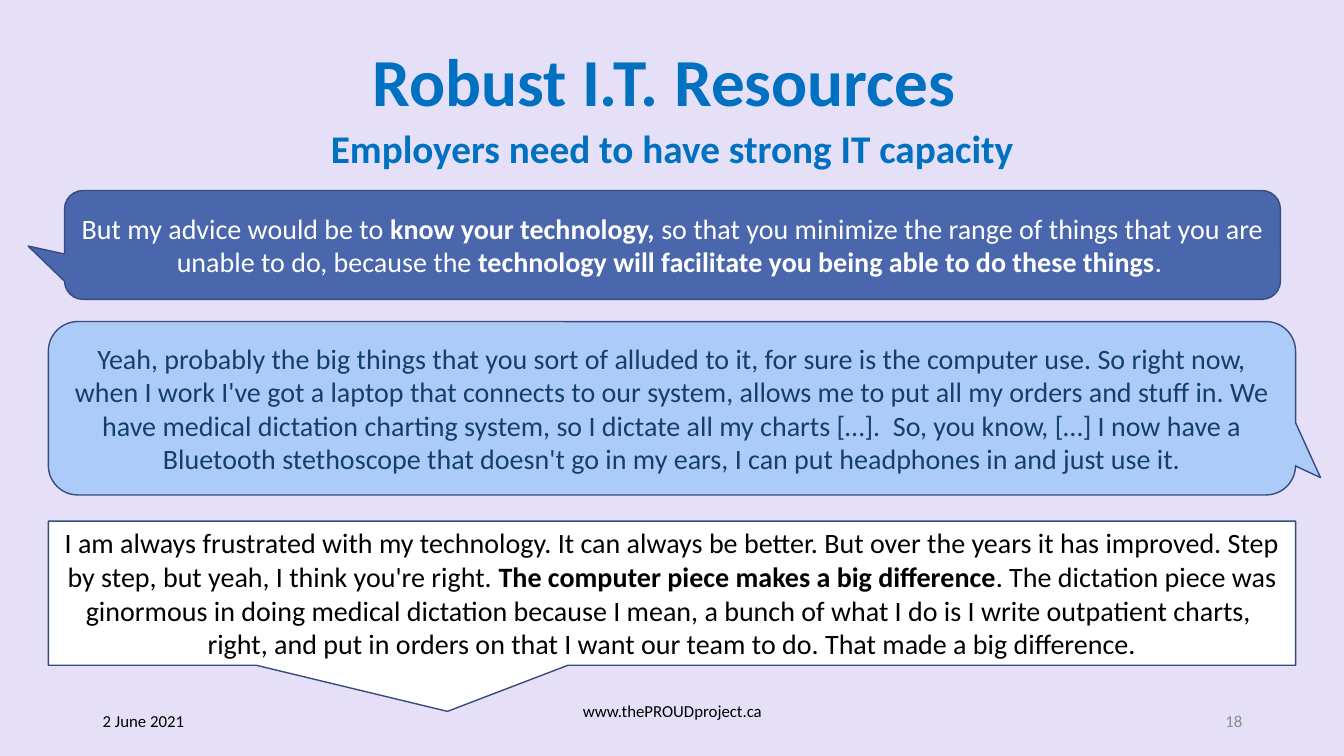
import pptx
import pptx.util
import pptx.dml.color
import pptx.enum.shapes
import pptx.enum.text

Inches = pptx.util.Inches
Shape = pptx.enum.shapes.MSO_SHAPE
Align = pptx.enum.text.PP_ALIGN
Anchor = pptx.enum.text.MSO_ANCHOR


def tint(code):
    return pptx.dml.color.RGBColor.from_string(code)


class Deck:
    """Holds the style and the current slide, and draws its elements."""

    font = "Calibri"
    edge = "374B7F"

    def __init__(self, back):
        self.prs = pptx.Presentation()
        self.prs.slide_width = Inches(13.33)
        self.prs.slide_height = Inches(7.5)
        self.slide = self.prs.slides.add_slide(self.prs.slide_layouts[6])
        fill = self.slide.background.fill
        fill.solid()
        fill.fore_color.rgb = tint(back)

    def letter(self, shape, paras, size, color, bold=False,
               align=Align.CENTER, space=None, **form):
        frame = shape.text_frame
        form = {"word_wrap": True, "vertical_anchor": Anchor.MIDDLE, **form}
        for key, value in form.items():
            setattr(frame, key, value)
        for num, text in enumerate(paras):
            para = frame.add_paragraph() if num else frame.paragraphs[0]
            para.alignment = align
            para.line_spacing = space
            for part, piece in enumerate(text.split("*")):
                run = para.add_run()
                run.text = piece
                style = {"name": self.font, "size": pptx.util.Pt(size),
                         "bold": bold or part % 2 == 1}
                for key, value in style.items():
                    setattr(run.font, key, value)
                run.font.color.rgb = tint(color)

    def label(self, spot, text, size, color, **form):
        box = self.slide.shapes.add_textbox(*map(Inches, spot))
        self.letter(box, [text], size, color, **form)

    def bubble(self, kind, spot, tail, fill, color, paras):
        shape = self.slide.shapes.add_shape(kind, *map(Inches, spot))
        for num, value in enumerate(tail):
            shape.adjustments[num] = value
        shape.shadow.inherit = False
        shape.fill.solid()
        shape.fill.fore_color.rgb = tint(fill)
        shape.line.color.rgb = tint(self.edge)
        shape.line.width = pptx.util.Pt(1)
        self.letter(shape, paras, 20, color)


def main():
    deck = Deck("E5E0F8")
    blue, black = "0070C0", "000000"
    deck.label((1.14, 0.39, 11.05, 0.91), "Robust I.T. Resources ", 48, blue,
               bold=True, space=0.9)
    deck.label((3.15, 1.18, 7.03, 0.57),
               "Employers need to have strong IT capacity", 28, blue,
               bold=True, vertical_anchor=Anchor.TOP)

    deck.bubble(
        Shape.ROUNDED_RECTANGULAR_CALLOUT, (0.64, 1.89, 12.06, 1.08),
        (-0.53, 0.01, 0.17), "4A66AC", "FFFFFF",
        ["But my advice would be to *know your technology, *so that you "
         "minimize the range of things that you are unable to do, because the "
         "*technology will facilitate you being able to do these things*. "])
    deck.bubble(
        Shape.ROUNDED_RECTANGULAR_CALLOUT, (0.48, 3.19, 12.37, 1.72),
        (0.52, 0.4, 0.17), "ACCBF9", "143F6A",
        ["Yeah, probably the big things that you sort of alluded to it, for "
         "sure is the computer use. So right now, when I work I've got a "
         "laptop that connects to our system, allows me to put all my orders "
         "and stuff in. We have medical dictation charting system, so I "
         "dictate all my charts […].  So, you know, […] I now have a "
         "Bluetooth stethoscope that doesn't go in my ears, I can put "
         "headphones in and just use it."])
    deck.bubble(
        Shape.RECTANGULAR_CALLOUT, (0.48, 5.17, 12.37, 1.43),
        (-0.18, 0.82), "FFFFFF", black,
        ["I am always frustrated with my technology. It can always be better. "
         "But over the years it has improved. Step by step, but yeah, I think "
         "you're right. *The computer piece makes a big difference*. The "
         "dictation piece was ginormous in doing medical dictation because I "
         "mean, a bunch of what I do is I write outpatient charts, ",
         "right, and put in orders on that I want our team to do. That made "
         "a big difference."])

    deck.label((0.92, 6.95, 3, 0.4), "2 June 2021", 12, black,
               align=Align.LEFT)
    deck.label((4.42, 6.95, 4.5, 0.4), "www.thePROUDproject.ca", 12, black,
               vertical_anchor=Anchor.TOP, margin_top=0)
    deck.label((9.42, 6.95, 3, 0.4), "18", 12, "8C8C8C", align=Align.RIGHT)
    deck.prs.save("out.pptx")


if __name__ == "__main__":
    main()
